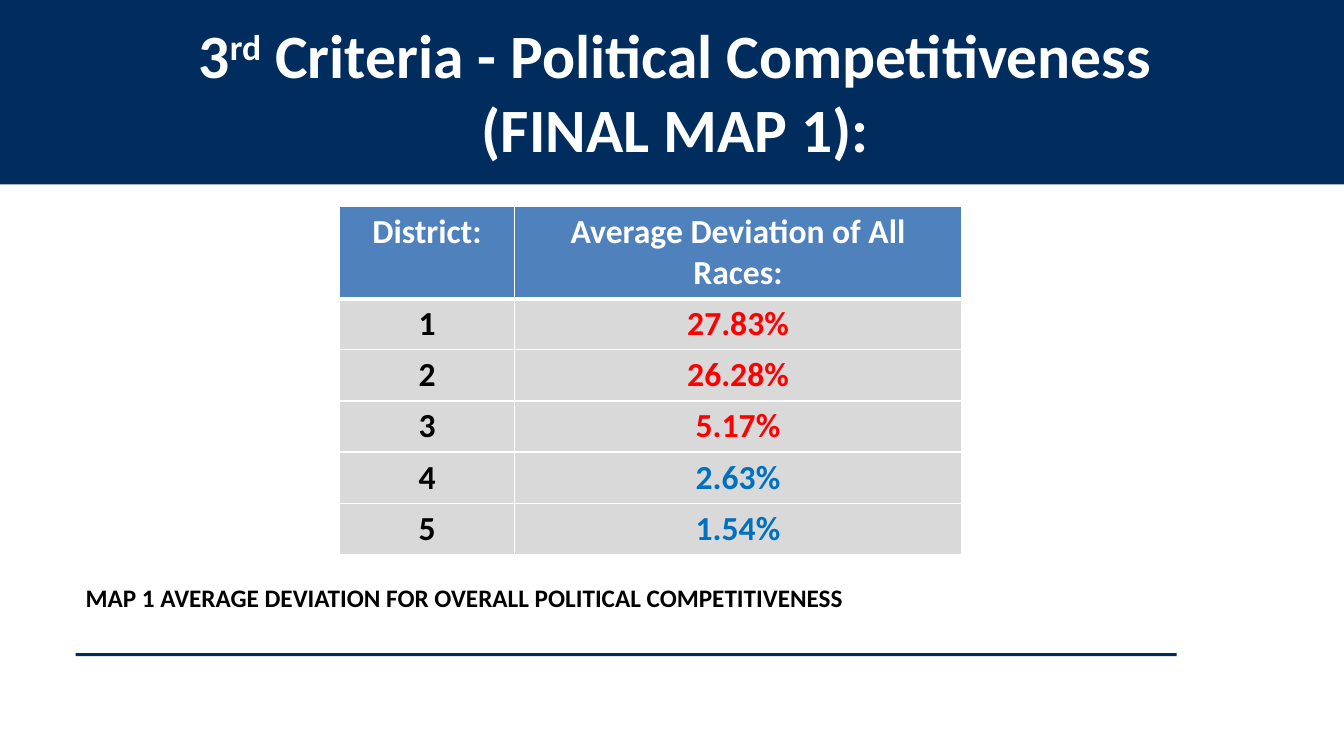
from lxml import etree
from pptx import Presentation
from pptx import util as u
from pptx.dml.color import RGBColor
from pptx.enum import shapes, text
from pptx.oxml.ns import qn

COLORS = {
    "navy": "002D5D",
    "header": "4F81BD",
    "row": "D9D9D9",
    "white": "FFFFFF",
    "black": "000000",
    "red": "FF0000",
    "blue": "0070C0",
}
DEVIATIONS = [
    ("1", "27.83%", "red"),
    ("2", "26.28%", "red"),
    ("3", "5.17%", "red"),
    ("4", "2.63%", "blue"),
    ("5", "1.54%", "blue"),
]


def color(name):
    return RGBColor.from_string(COLORS[name])


def add_text(paragraph, content, *, size, ink, font="Calibri", bold=True,
             align=text.PP_ALIGN.LEFT, baseline=0):
    """Append one formatted run; baseline is a percentage, positive for superscript."""
    paragraph.alignment = align
    run = paragraph.add_run()
    run.text = content
    run.font.name, run.font.size, run.font.bold = font, u.Pt(size), bold
    run.font.color.rgb = color(ink)
    if baseline:
        run._r.get_or_add_rPr().set("baseline", str(baseline * 1000))


def add_borders(cell, bottom):
    """Draw white cell borders, 1 pt wide except the bottom one."""
    properties = cell._tc.get_or_add_tcPr()
    for side, width in (("L", 1), ("R", 1), ("T", 1), ("B", bottom)):
        line = etree.SubElement(properties, qn(f"a:ln{side}"), w=str(u.Pt(width)))
        fill = etree.SubElement(line, qn("a:solidFill"))
        etree.SubElement(fill, qn("a:srgbClr"), val=COLORS["white"])


class SlideBuilder:
    """Holds the slide and the text style shared by its elements."""

    def __init__(self, slide):
        self.slide = slide
        self.title_style = {"size": 44, "ink": "white", "align": text.PP_ALIGN.CENTER}
        self.cell_style = {"size": 24, "align": text.PP_ALIGN.CENTER}
        self.caption_style = {"size": 18, "ink": "black"}

    def bar(self, *box):
        shape = self.slide.shapes.add_shape(
            shapes.MSO_SHAPE.RECTANGLE, *map(u.Inches, box))
        shape.shadow.inherit = False
        shape.fill.solid()
        shape.fill.fore_color.rgb = color("navy")
        shape.line.fill.background()

    def title(self, lines, *box):
        """Fill the title; each line is a list of (text, baseline) pairs."""
        shape = self.slide.shapes.title
        shape.left, shape.top, shape.width, shape.height = map(u.Inches, box)
        shape.element.getparent().append(shape.element)  # in front of the banner
        frame = shape.text_frame
        frame.word_wrap = True
        frame.auto_size = text.MSO_AUTO_SIZE.NONE
        frame.vertical_anchor = text.MSO_ANCHOR.TOP
        frame.margin_left = u.Inches(0.6)
        for index, pieces in enumerate(lines):
            paragraph = frame.add_paragraph() if index else frame.paragraphs[0]
            for content, baseline in pieces:
                add_text(paragraph, content, baseline=baseline, **self.title_style)

    def caption(self, content, *box):
        frame = self.slide.shapes.add_textbox(*map(u.Inches, box)).text_frame
        frame.word_wrap = True
        add_text(frame.paragraphs[0], content, **self.caption_style)

    def cell(self, cell, content, fill, ink, bottom):
        add_borders(cell, bottom)
        cell.fill.solid()
        cell.fill.fore_color.rgb = color(fill)
        add_text(cell.text_frame.paragraphs[0], content, ink=ink, **self.cell_style)

    def table(self, headings, records, left, top, widths, header_height, row_height):
        heights = [header_height] + [row_height] * len(records)
        table = self.slide.shapes.add_table(
            len(heights), len(widths), u.Inches(left), u.Inches(top),
            u.Inches(sum(widths)), u.Inches(sum(heights))).table
        for column, width in zip(table.columns, widths):
            column.width = u.Inches(width)
        for row, height in zip(table.rows, heights):
            row.height = u.Inches(height)
        for column, heading in enumerate(headings):
            self.cell(table.cell(0, column), heading, "header", "white", 3)
        for row, (district, deviation, ink) in enumerate(records, 1):
            self.cell(table.cell(row, 0), district, "row", "black", 1)
            self.cell(table.cell(row, 1), deviation, "row", ink, 1)


def main():
    presentation = Presentation()
    presentation.slide_width = u.Inches(13.33)
    presentation.slide_height = u.Inches(7.5)
    title_only = presentation.slide_layouts[5]
    builder = SlideBuilder(presentation.slides.add_slide(title_only))

    builder.bar(0, -0.03, 13.33, 1.86)
    builder.bar(0.75, 6.48, 10.92, 0.03)
    builder.title(
        [[("3", 0), ("rd", 30), (" Criteria - Political Competitiveness", 0)],
         [("(FINAL MAP 1):", 0)]],
        0.56, 0.12, 11.78, 2.32)
    builder.table(("District:", "Average Deviation of All Races:"), DEVIATIONS,
                  3.37, 2.05, (1.73, 4.44), 0.9, 0.5)
    builder.caption("MAP 1 AVERAGE DEVIATION FOR OVERALL POLITICAL COMPETITIVENESS",
                    0.75, 5.73, 12.3, 0.4)
    presentation.save("out.pptx")


if __name__ == "__main__":
    main()
